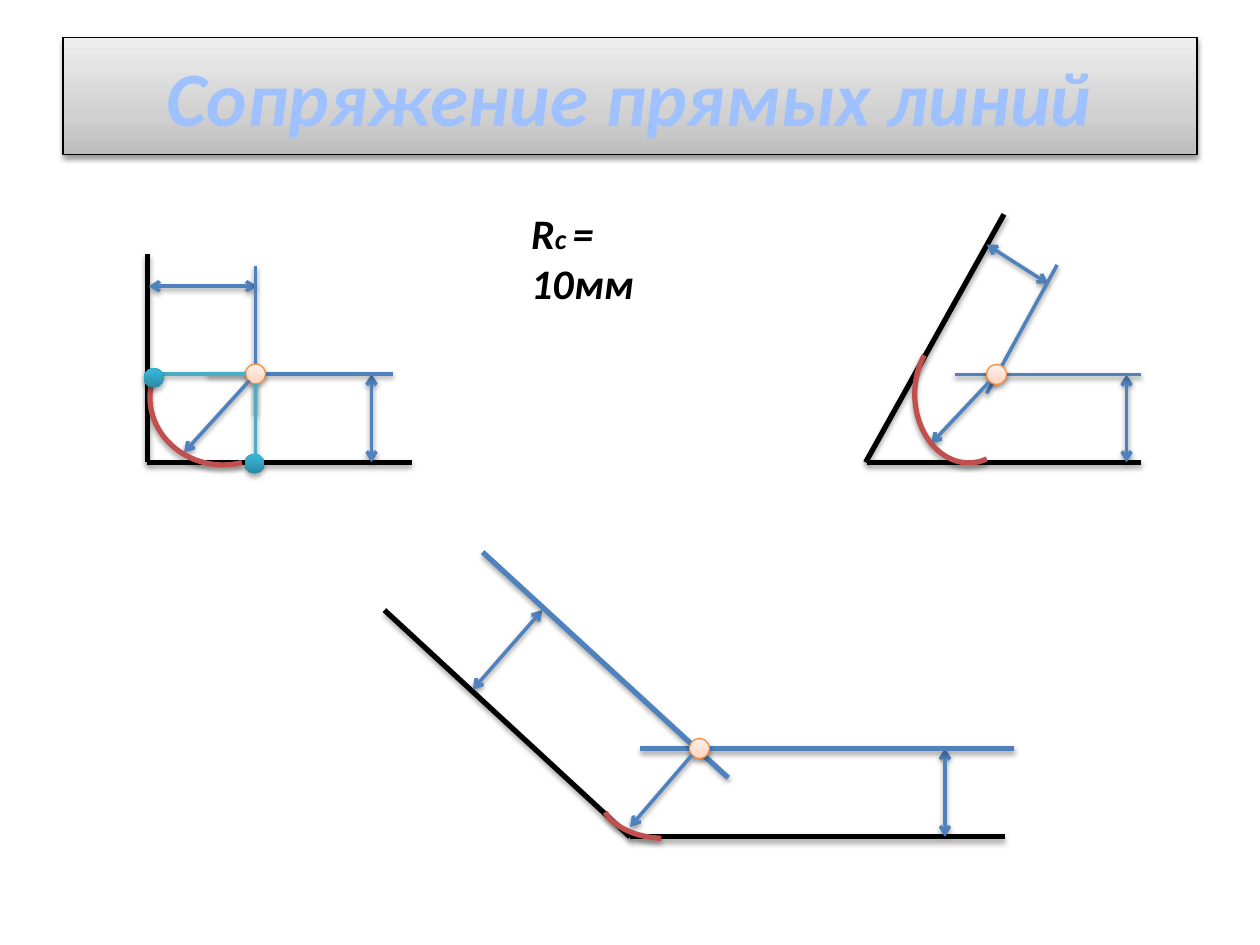
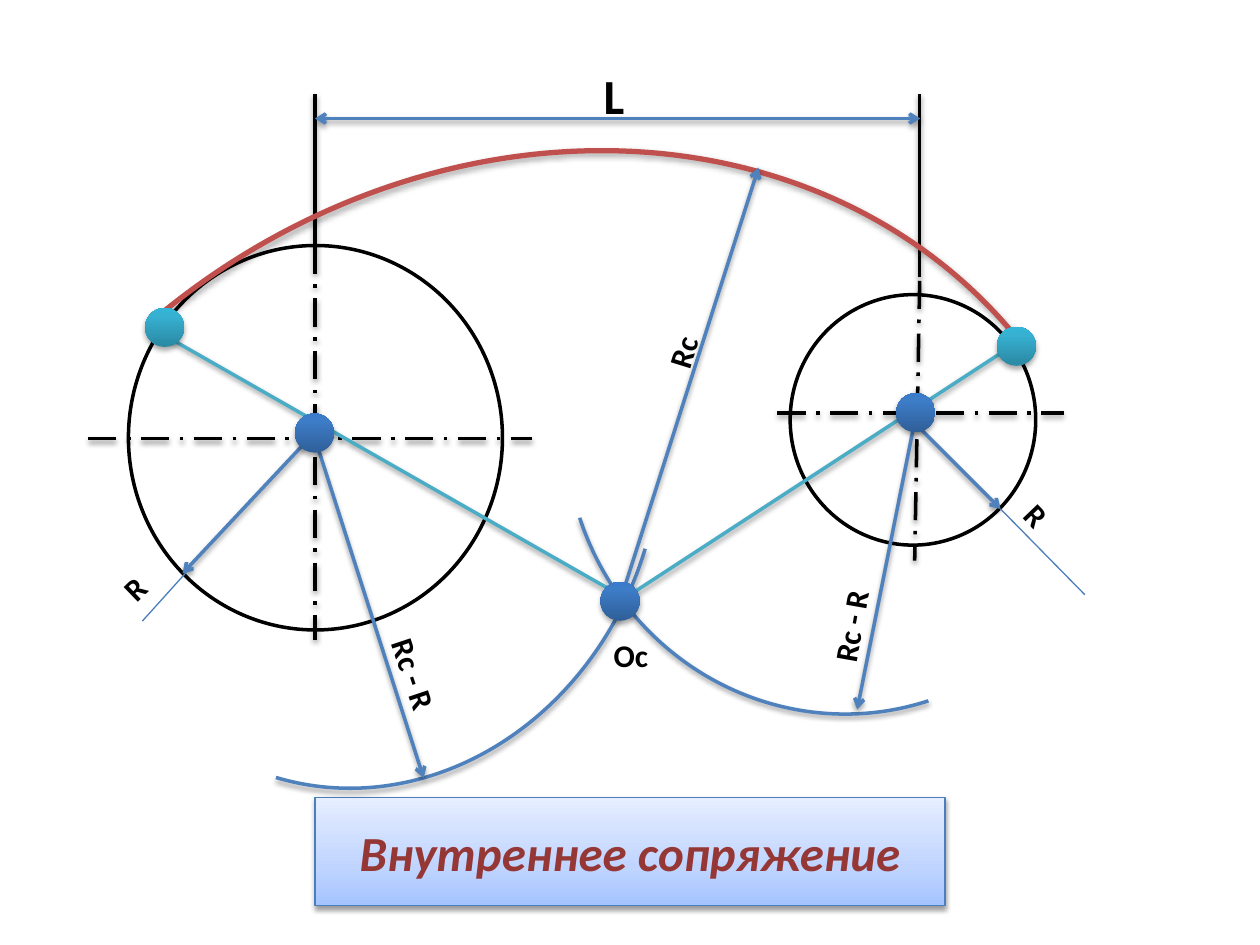
from lxml import etree
from pptx import Presentation
from pptx.dml.color import RGBColor
from pptx.enum import dml, shapes, text
from pptx.oxml import ns
from pptx.util import Cm, Pt

BLACK = RGBColor(0x00, 0x00, 0x00)
WHITE = RGBColor(0xFF, 0xFF, 0xFF)
BLUE = RGBColor(0x4F, 0x81, 0xBD)
THIN_BLUE = RGBColor(0x4B, 0x7E, 0xBC)
TEXT_OUTLINE = RGBColor(0x46, 0x7A, 0xB8)
TEAL = RGBColor(0x4B, 0xAC, 0xC6)
RED = RGBColor(0xC0, 0x50, 0x4D)
DARK_RED = RGBColor(0x95, 0x37, 0x35)
ORANGE = RGBColor(0xF6, 0x92, 0x40)


def stops(*pairs):
    return [(pos, RGBColor.from_string(color)) for pos, color in pairs]


GREY_BAND = stops((0, "BDBDBD"), (35, "D1D1D1"), (100, "EEEEEE"))
BLUE_BAND = stops((0, "A4C4FF"), (35, "BFD4FF"), (100, "E6EEFF"))
PEACH_DOT = stops((0, "FFD2BD"), (35, "FFDED0"), (100, "FFF2ED"))
TEAL_DOT = stops((0, "2A88A2"), (80, "37B1D2"), (100, "34B4D6"))
BLUE_DOT = stops((0, "2F5F99"), (80, "3D7CC7"), (100, "3A7CCB"))
TITLE_TEXT = stops((0, "BFD3F9"), (9, "A0C1FF"), (50, "003D85"),
                   (79, "A0C1FF"), (100, "BFD3F9"))

FONT = "Calibri"
DEFAULT_ARC = (162, 0)


# ---- XML helpers ----
def sub(parent, tag, **attrs):
    return etree.SubElement(parent, ns.qn(tag), {k: str(v) for k, v in attrs.items()})


def apply_gradient(owner, fill, colors, angle):
    """Replace the solid fill inside owner with a gradient."""
    fill.solid()
    solid = owner.find(ns.qn("a:solidFill"))
    grad = etree.Element(ns.qn("a:gradFill"), rotWithShape="1")
    gs_list = sub(grad, "a:gsLst")
    for pos, color in colors:
        sub(sub(gs_list, "a:gs", pos=pos * 1000), "a:srgbClr", val=color)
    sub(grad, "a:lin", ang=angle * 60000, scaled=0)
    owner.replace(solid, grad)


def set_shadow(sp, heavy=False, visible=True):
    effects = sub(sp._element.spPr, "a:effectLst")
    if visible:
        shadow = sub(effects, "a:outerShdw", blurRad=Pt(3.1),
                     dist=Pt(1.8 if heavy else 1.6), dir=5400000, rotWithShape=0)
        color = sub(shadow, "a:srgbClr", val=BLACK)
        sub(color, "a:alpha", val=35000 if heavy else 38000)


# ---- Drawing helpers: all lengths in cm, relative to a box origin ----
def add_line(s, box, points, color=BLUE, width=2, ends="", dash=None, shadow=True):
    x1, y1, x2, y2 = points
    left, top = box
    sp = s.shapes.add_connector(shapes.MSO_CONNECTOR.STRAIGHT, Cm(left + x1),
                                Cm(top + y1), Cm(left + x2), Cm(top + y2))
    sp.line.color.rgb = color
    sp.line.width = Pt(width)
    if dash:
        sp.line.dash_style = dash
    ln = sp.line._get_or_add_ln()
    for tag in ("head", "tail"):
        if tag in ends:
            sub(ln, f"a:{tag}End", type="arrow")
    set_shadow(sp, heavy=width == 3, visible=shadow)
    return sp


def add_dimension(s, box, points):
    add_line(s, box, points, ends="head tail")


def add_radius(s, box, points):
    add_line(s, box, points, ends="tail")


def add_preset(s, kind, box, rect, line=None, width=0.75):
    left, top = box
    x, y, w, h = rect
    sp = s.shapes.add_shape(kind, Cm(left + x), Cm(top + y), Cm(w), Cm(h))
    if line is None:
        sp.line.fill.background()
    else:
        sp.line.color.rgb = line
        sp.line.width = Pt(width)
    return sp


def add_arc(s, box, rect, rotation, color=BLUE, width=2, adj=DEFAULT_ARC):
    sp = add_preset(s, shapes.MSO_SHAPE.ARC, box, rect, color, width)
    sp.fill.background()
    sp.rotation = rotation
    sp.adjustments[0], sp.adjustments[1] = adj
    set_shadow(sp, heavy=width == 3)


def add_dot(s, box, center, size, colors, line=None):
    x, y = center
    rect = (x - size / 2, y - size / 2, size, size)
    sp = add_preset(s, shapes.MSO_SHAPE.FLOWCHART_CONNECTOR, box, rect, line)
    apply_gradient(sp._element.spPr, sp.fill, colors, 270)
    set_shadow(sp, heavy=line is None)


def add_run(p, words, size, color=BLACK, italic=False):
    r = p.add_run()
    r.text = words
    r.font.name = FONT
    r.font.size = Pt(size)
    r.font.bold = True
    r.font.italic = italic
    r.font.color.rgb = color
    return r


def add_label(s, box, rect, runs, rotation=0, italic=False):
    left, top = box
    x, y, w, h = rect
    sp = s.shapes.add_textbox(Cm(left + x), Cm(top + y), Cm(w), Cm(h))
    sp.rotation = rotation
    tf = sp.text_frame
    tf.word_wrap = True
    tf.auto_size = text.MSO_AUTO_SIZE.SHAPE_TO_FIT_TEXT
    for words, size in runs:
        add_run(tf.paragraphs[0], words, size, italic=italic)


def add_title(s, rect, words, size, band, line, color):
    sp = add_preset(s, shapes.MSO_SHAPE.RECTANGLE, (0, 0), rect, line)
    apply_gradient(sp._element.spPr, sp.fill, band, 270)
    set_shadow(sp)
    tf = sp.text_frame
    tf.word_wrap = True
    tf.vertical_anchor = text.MSO_ANCHOR.MIDDLE
    p = tf.paragraphs[0]
    p.alignment = text.PP_ALIGN.CENTER
    return add_run(p, words, size, color, italic=True)


# ---- Slide 1: fillets between straight lines ----
def draw_corner(s, box, sides, dims, guides, center, radius, arc, arc_rotation,
                arc_adj, guide_width=2):
    for side in sides:
        add_line(s, box, side, BLACK, 3)
    for dim in dims:
        add_dimension(s, box, dim)
    for guide in guides:
        add_line(s, box, guide, width=guide_width)
    add_dot(s, box, center, 0.4, PEACH_DOT, ORANGE)
    add_radius(s, box, radius)
    add_arc(s, box, arc, arc_rotation, RED, 3, arc_adj)


def draw_right_angle(s, box):
    draw_corner(
        s, box,
        sides=[(0, 0, 0, 4.19), (0, 4.19, 5.33, 4.19)],
        dims=[(0.03, 0.64, 2.21, 0.64), (4.52, 2.41, 4.52, 4.19)],
        guides=[(2.18, 0.23, 2.18, 3.2), (1.19, 2.41, 4.95, 2.41)],
        center=(2.18, 2.41), radius=(2.06, 2.54, 0.74, 3.99),
        arc=(0.05, 1.57, 2.9, 2.67), arc_rotation=186.6, arc_adj=(147.55, 6.13))
    # Perpendiculars and tangent points
    add_line(s, box, (2.18, 2.62, 2.18, 4.19), TEAL)
    add_line(s, box, (1.98, 2.41, 0, 2.41), TEAL)
    for point in ((2.16, 4.22), (0.13, 2.49)):
        add_dot(s, box, point, 0.4, TEAL_DOT)


def draw_acute_angle(s, box):
    draw_corner(
        s, box,
        sides=[(2.79, 0, 0, 5), (0.03, 5, 5.56, 5)],
        dims=[(5.26, 3.23, 5.26, 5), (2.44, 0.61, 3.68, 1.4)],
        guides=[(1.8, 3.23, 5.56, 3.23), (2.44, 3.61, 3.86, 1.02)],
        center=(2.64, 3.23), radius=(2.49, 3.38, 1.32, 4.62),
        arc=(0.99, 2.24, 2.18, 2.77), arc_rotation=180, arc_adj=(152.69, 24.63))


def draw_obtuse_angle(s, box):
    draw_corner(
        s, box,
        sides=[(0, 1.17, 4.95, 5.74), (4.95, 5.74, 12.5, 5.74)],
        dims=[(3.18, 1.17, 1.78, 2.77), (11.3, 3.96, 11.3, 5.74)],
        guides=[(5.16, 3.96, 12.7, 3.96), (1.98, 0, 6.93, 4.55)],
        center=(6.35, 3.96), radius=(6.2, 4.09, 4.95, 5.54),
        arc=(4.37, 4.17, 2.59, 1.6), arc_rotation=180, arc_adj=(165.62, 208.4),
        guide_width=3)


def build_lines_slide(s):
    r = add_title(s, (1.27, 0.76, 22.86, 2.36), "Сопряжение прямых линий", 44,
                  GREY_BAND, BLACK, BLACK)
    r_pr = r.font._element
    apply_gradient(r_pr, r.font.fill, TITLE_TEXT, 90)
    outline = etree.Element(ns.qn("a:ln"), w=str(Pt(0.83)))
    sub(sub(outline, "a:solidFill"), "a:srgbClr", val=TEXT_OUTLINE)
    r_pr.insert(0, outline)

    draw_right_angle(s, (2.97, 5.13))
    draw_acute_angle(s, (17.45, 4.32))
    draw_obtuse_angle(s, (7.75, 11.13))
    add_label(s, (10.46, 4.06), (0, 0, 3.86, 1.27),
              [("R", 24), ("с ", 16), ("= 10мм", 24)], italic=True)


# ---- Slide 2: internal conjugation of two circles ----
def draw_circle(s, box, size, axes, extension, radius, tail, label, rotation):
    sp = add_preset(s, shapes.MSO_SHAPE.FLOWCHART_CONNECTOR, box, (0, 0, *size), BLACK, 2)
    sp.fill.solid()
    sp.fill.fore_color.rgb = WHITE
    set_shadow(sp, visible=False)
    for axis in axes:
        add_line(s, box, axis, BLACK, dash=dml.MSO_LINE.LONG_DASH_DOT)
    add_line(s, box, extension, BLACK)
    add_radius(s, box, radius)
    add_line(s, box, tail, THIN_BLUE, 0.75, shadow=False)
    add_label(s, box, label, [("R", 18)], rotation)


def draw_conjugation(s, box):
    """Everything is measured from the conjugation centre Oc."""
    # Distance between the circle centres
    add_dimension(s, box, (-6.15, -9.73, 6.05, -9.73))
    add_label(s, box, (-0.58, -10.92, 0.99, 1.45), [("L", 28)])
    # Arcs and their radii
    add_arc(s, box, (-11.61, -8.53, 13.11, 11.61), 106.7)
    add_arc(s, box, (-1.09, -9.09, 11.07, 11.38), 161.9)
    add_arc(s, box, (-15.06, -8.38, 25.96, 22.5), 321.4, RED, 3, (161.64, 0))
    for radius in ((-6.15, -3.28, -3.96, 3.56), (5.97, -3.78, 4.78, 2.18),
                   (0, 0, 2.79, -8.74)):
        add_radius(s, box, radius)
    for words, x, y, w, rotation in (("Rc - R", -5.16, 0.99, 2.03, 71.5),
                                     ("Rc - R", 3.23, -0.53, 3.02, 280),
                                     ("Rc", 0.53, -5.77, 1.6, 287.2),
                                     ("Oc", -0.38, 0.58, 1.78, 0)):
        add_label(s, box, (x, y, w, 1.02), [(words, 18)], rotation)
    # Lines through the centres to the tangent points
    add_line(s, box, (-0.28, -0.28, -9.22, -5.38), TEAL)
    add_line(s, box, (0, 0, 7.95, -5.18), TEAL)
    for point in ((-9.18, -5.52), (7.99, -5.14)):
        add_dot(s, box, point, 0.79, TEAL_DOT)
    for center in ((5.96, -3.8), (-6.16, -3.39), (0, 0)):
        add_dot(s, box, center, 0.79, BLUE_DOT)


def build_circles_slide(s):
    add_title(s, (6.35, 16.08, 12.7, 2.18), "Внутреннее сопряжение", 28,
              BLUE_BAND, THIN_BLUE, DARK_RED)
    draw_circle(s, (2.59, 4.95), (7.54, 7.75),
                axes=[(3.76, 0, 3.76, 7.95), (-0.81, 3.89, 8.13, 3.89)],
                extension=(3.76, 0, 3.76, -3.05),
                radius=(3.76, 3.76, 1.09, 6.61), tail=(1.19, 6.56, 0.28, 7.57),
                label=(-0.3, 6.43, 0.79, 1.02), rotation=316)
    draw_circle(s, (15.93, 5.94), (4.95, 5.05),
                axes=[(2.61, -0.28, 2.51, 5.36), (-0.26, 2.39, 5.51, 2.39)],
                extension=(2.61, -0.35, 2.61, -4.04),
                radius=(2.59, 2.67, 4.24, 4.32), tail=(4.24, 4.32, 5.94, 6.05),
                label=(4.52, 3.99, 0.99, 1.02), rotation=46.2)
    draw_conjugation(s, (12.5, 12.12))


def main():
    prs = Presentation()
    prs.slide_width, prs.slide_height = Cm(25.4), Cm(19.05)
    for build in (build_lines_slide, build_circles_slide):
        build(prs.slides.add_slide(prs.slide_layouts[6]))
    prs.save("out.pptx")


if __name__ == "__main__":
    main()
